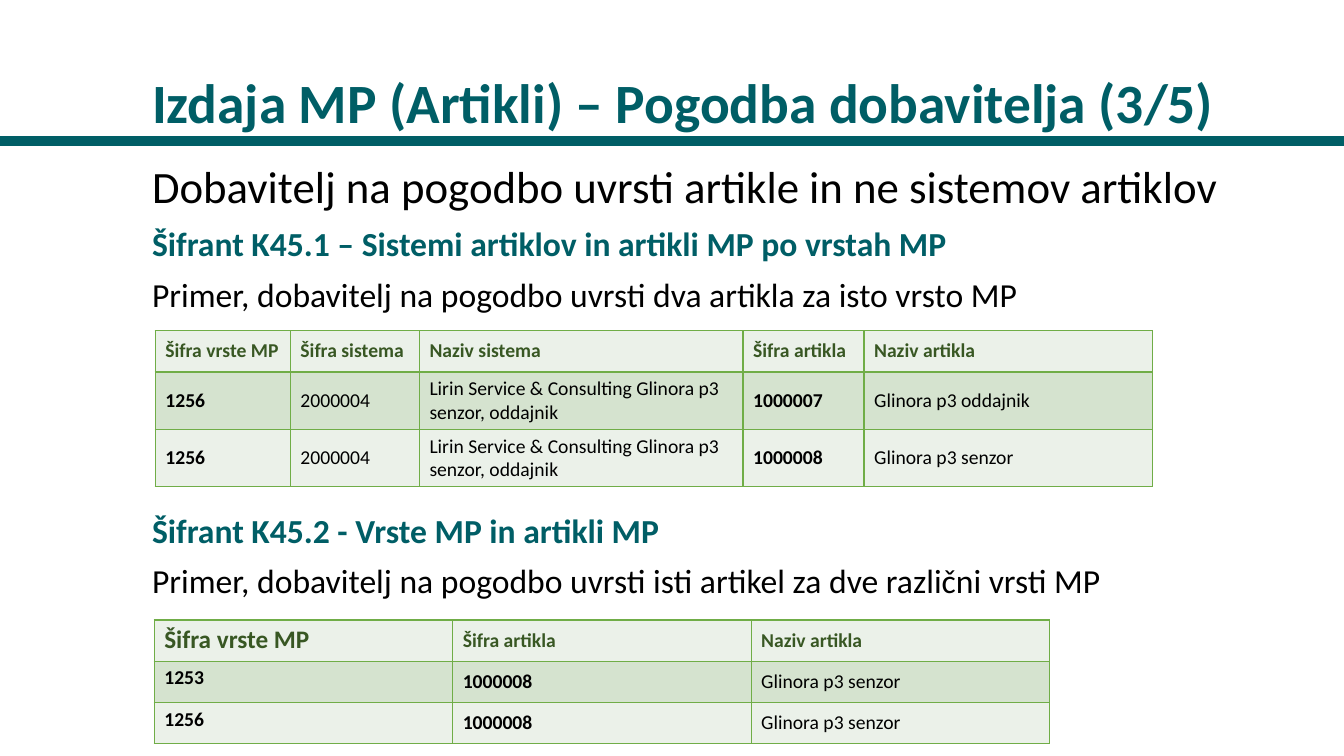
from dataclasses import dataclass
from typing import Any

from lxml import etree
from pptx import Presentation
from pptx.dml.color import RGBColor
from pptx.enum.shapes import MSO_CONNECTOR
from pptx.enum.text import MSO_ANCHOR
from pptx.oxml.ns import qn
from pptx.util import Inches, Pt

STRAIGHT = MSO_CONNECTOR.STRAIGHT
TOP, MIDDLE, BOTTOM = MSO_ANCHOR.TOP, MSO_ANCHOR.MIDDLE, MSO_ANCHOR.BOTTOM


@dataclass(frozen=True)
class Theme:
    font: str = "Calibri"
    teal: str = "005E66"
    black: str = "000000"
    header: str = "385723"
    border: str = "70AD47"
    light: str = "EBF1E9"
    dark: str = "D5E3CF"
    title: float = 39.6
    lead: float = 32
    body: float = 24
    label: float = 18
    cell: float = 14
    rule: float = 7


@dataclass(frozen=True)
class Line:
    text: str
    size: float
    color: str
    bold: bool = False


@dataclass(frozen=True)
class TextBlock:
    top: float
    height: float
    lines: list[Line]
    anchor: Any = TOP


@dataclass(frozen=True)
class CodeTable:
    left: float
    top: float
    widths: list[float]
    heights: list[float]
    rows: list[list[str]]
    bold_columns: set[int]
    first_size: float
    first_anchor: Any


T = Theme()
LEFT, WIDTH = 1.41, 11.04
SYSTEM = "Lirin Service & Consulting Glinora p3 senzor, oddajnik"
SENSOR = "Glinora p3 senzor"

BLOCKS = [
    TextBlock(0.15, 1.24, [
        Line("Izdaja MP (Artikli) – Pogodba dobavitelja (3/5)", T.title, T.teal, True),
    ], BOTTOM),
    TextBlock(1.59, 1.65, [
        Line("Dobavitelj na pogodbo uvrsti artikle in ne sistemov artiklov", T.lead, T.black),
        Line("Šifrant K45.1 – Sistemi artiklov in artikli MP po vrstah MP", T.body, T.teal, True),
        Line("Primer, dobavitelj na pogodbo uvrsti dva artikla za isto vrsto MP", T.body, T.black),
    ]),
    TextBlock(5.05, 1.05, [
        Line("Šifrant K45.2 - Vrste MP in artikli MP", T.body, T.teal, True),
        Line("Primer, dobavitelj na pogodbo uvrsti isti artikel za dve različni vrsti MP",
             T.body, T.black),
    ]),
]

TABLES = [
    CodeTable(1.54, 3.28, [1.34, 1.28, 3.21, 1.2, 2.86], [0.41, 0.57, 0.57], [
        ["Šifra vrste MP", "Šifra sistema", "Naziv sistema", "Šifra artikla", "Naziv artikla"],
        ["1256", "2000004", SYSTEM, "1000007", "Glinora p3 oddajnik"],
        ["1256", "2000004", SYSTEM, "1000008", SENSOR],
    ], {0, 3}, T.cell, MIDDLE),
    CodeTable(1.53, 6.15, [2.96] * 3, [0.41] * 3, [
        ["Šifra vrste MP", "Šifra artikla", "Naziv artikla"],
        ["1253", "1000008", SENSOR],
        ["1256", "1000008", SENSOR],
    ], {0, 1}, T.label, TOP),
]


def apply(target: Any, values: dict[str, Any]) -> None:
    """Set each named attribute on the target."""
    for name, value in values.items():
        setattr(target, name, value)


def write(p: Any, line: Line) -> None:
    """Add one formatted run to a paragraph."""
    r = p.add_run()
    r.text = line.text
    apply(r.font, {"name": T.font, "size": Pt(line.size), "bold": line.bold})
    r.font.color.rgb = RGBColor.from_string(line.color)


def add_block(s: Any, block: TextBlock) -> None:
    """Draw a text box with one paragraph per line."""
    sp = s.shapes.add_textbox(*map(Inches, (LEFT, block.top, WIDTH, block.height)))
    tf = sp.text_frame
    apply(tf, {"word_wrap": True, "vertical_anchor": block.anchor})
    for i, line in enumerate(block.lines):
        p = tf.add_paragraph() if i else tf.paragraphs[0]
        apply(p, {"line_spacing": 0.9, "space_before": Pt(10 if i else 0)})
        write(p, line)


def add_rule(s: Any, y: float, width: float) -> None:
    """Draw the full-width line under the title."""
    sp = s.shapes.add_connector(STRAIGHT, *map(Inches, (0, y, width, y)))
    sp.line.width = Pt(T.rule)
    sp.line.color.rgb = RGBColor.from_string(T.teal)
    etree.SubElement(sp.element.spPr, qn("a:effectLst"))


def add_borders(cell: Any) -> None:
    """Put a thin line on all four sides of a cell."""
    tc_pr = cell._tc.get_or_add_tcPr()
    for i, side in enumerate(("a:lnL", "a:lnR", "a:lnT", "a:lnB")):
        ln = etree.Element(qn(side), w=str(Pt(1)))
        fill = etree.SubElement(ln, qn("a:solidFill"))
        etree.SubElement(fill, qn("a:srgbClr"), val=T.border)
        tc_pr.insert(i, ln)


def add_code_table(s: Any, spec: CodeTable) -> None:
    """Draw a banded table of codes and names."""
    size = (sum(spec.widths), sum(spec.heights))
    frame = s.shapes.add_table(len(spec.rows), len(spec.widths),
                               *map(Inches, (spec.left, spec.top, *size)))
    table = frame.table
    apply(table, {"first_row": False, "horz_banding": False})
    for column, width in zip(table.columns, spec.widths):
        column.width = Inches(width)
    for i, (row, height) in enumerate(zip(table.rows, spec.heights)):
        row.height = Inches(height)
        for j, cell in enumerate(row.cells):
            cell.vertical_anchor = MIDDLE if j else spec.first_anchor
            cell.fill.solid()
            cell.fill.fore_color.rgb = RGBColor.from_string(T.dark if i % 2 else T.light)
            add_borders(cell)
            write(cell.text_frame.paragraphs[0], Line(
                spec.rows[i][j],
                T.cell if i or j else spec.first_size,
                T.black if i else T.header,
                i == 0 or j in spec.bold_columns,
            ))


def main() -> None:
    """Build and save the slide."""
    prs = Presentation()
    apply(prs, {"slide_width": Inches(13.33), "slide_height": Inches(7.5)})
    s = prs.slides.add_slide(prs.slide_layouts[6])
    add_rule(s, 1.4, 13.33)
    for block in BLOCKS:
        add_block(s, block)
    for spec in TABLES:
        add_code_table(s, spec)
    prs.save("out.pptx")


if __name__ == "__main__":
    main()
